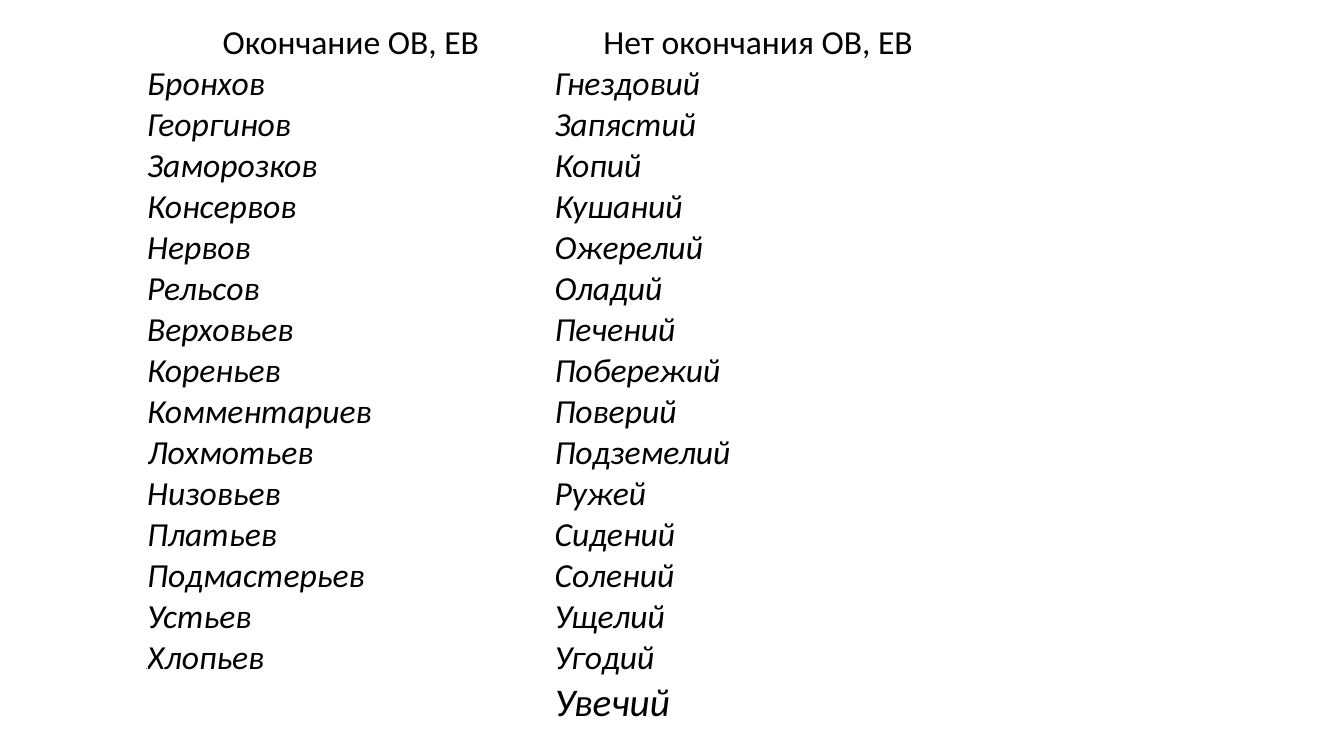
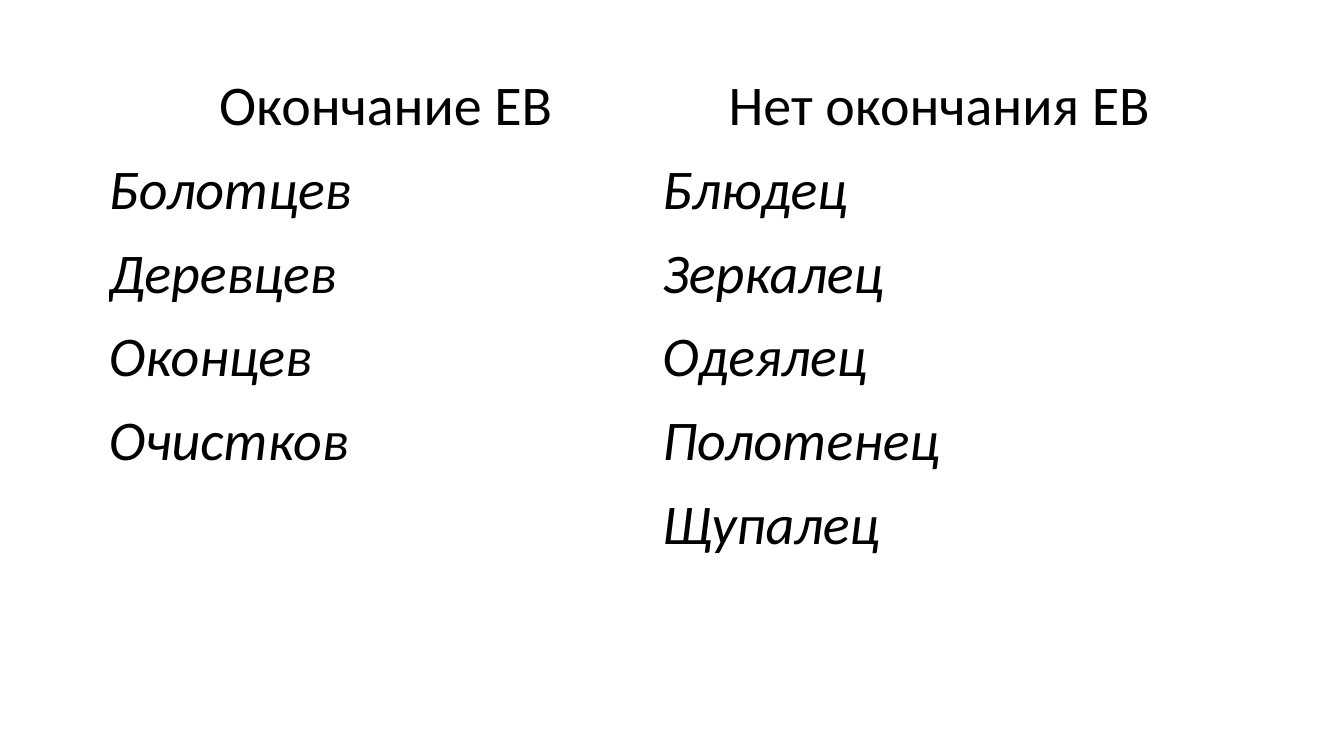
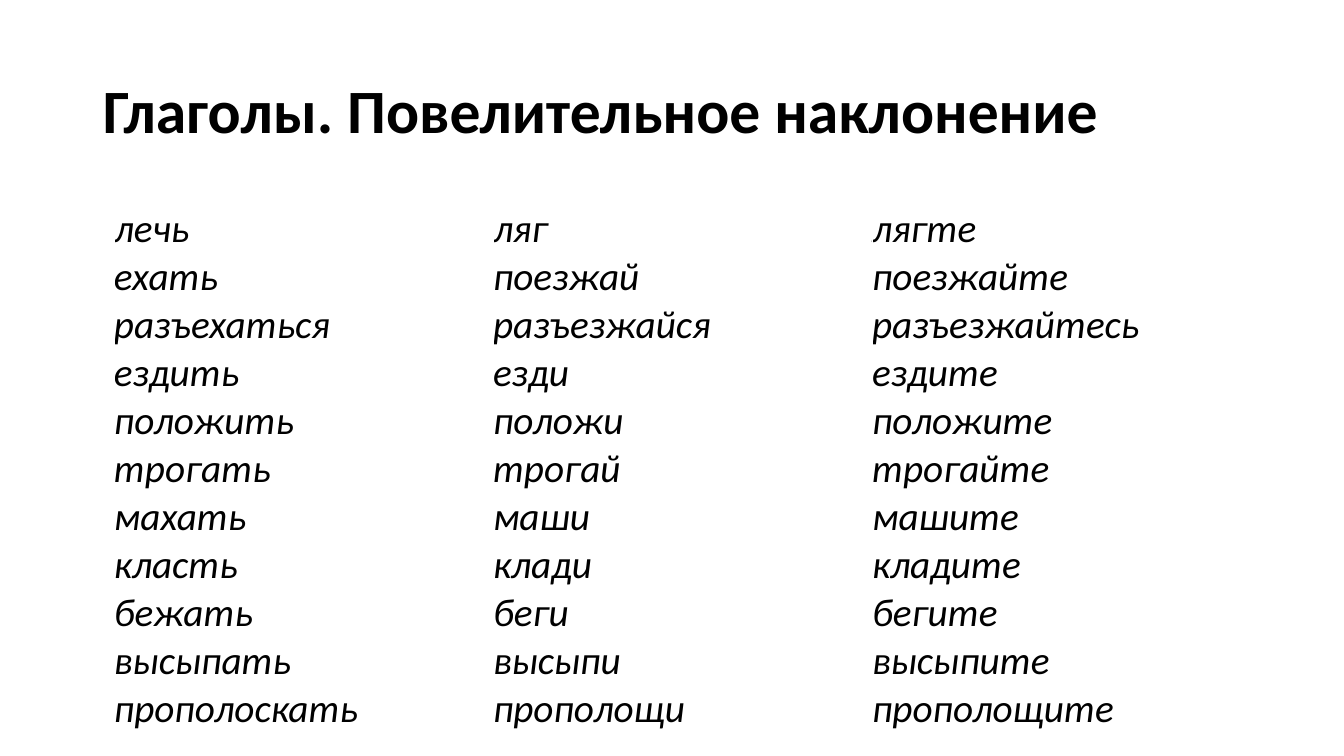
"""Build three slides of Russian word form tables."""
from itertools import zip_longest

from pptx import Presentation
from pptx.dml.color import RGBColor
from pptx.enum.text import MSO_ANCHOR, MSO_AUTO_SIZE, PP_ALIGN
from pptx.util import Emu, Pt

PX = 9144
FONT = "Calibri"
COLORS = {"text": "000000", "background": "FFFFFF"}
TITLE_ONLY, BLANK = 5, 6

PLURAL_HEADERS = ["Окончание ОВ, ЕВ", "Нет окончания ОВ, ЕВ"]
PLURAL_COLUMNS = [
    ["Бронхов", "Георгинов", "Заморозков", "Консервов", "Нервов", "Рельсов",
     "Верховьев", "Кореньев", "Комментариев", "Лохмотьев", "Низовьев",
     "Платьев", "Подмастерьев", "Устьев", "Хлопьев"],
    ["Гнездовий", "Запястий", "Копий", "Кушаний", "Ожерелий", "Оладий",
     "Печений", "Побережий", "Поверий", "Подземелий", "Ружей", "Сидений",
     "Солений", "Ущелий", "Угодий", "Увечий"],
]
DIMINUTIVE_HEADERS = ["Окончание ЕВ", "Нет окончания ЕВ"]
DIMINUTIVE_COLUMNS = [
    ["Болотцев", "Деревцев", "Оконцев", "Очистков"],
    ["Блюдец", "Зеркалец", "Одеялец", "Полотенец", "Щупалец"],
]
VERB_COLUMNS = [
    ["лечь", "ехать", "разъехаться", "ездить", "положить", "трогать",
     "махать", "класть", "бежать", "высыпать", "прополоскать"],
    ["ляг", "поезжай", "разъезжайся", "езди", "положи", "трогай",
     "маши", "клади", "беги", "высыпи", "прополощи"],
    ["лягте", "поезжайте", "разъезжайтесь", "ездите", "положите", "трогайте",
     "машите", "кладите", "бегите", "высыпите", "прополощите"],
]


def px(length):
    """Turn whole pixels into EMU."""
    return Emu(length * PX)


def color(name):
    """Look up a named colour."""
    return RGBColor.from_string(COLORS[name])


def write(frame, text, size, bold=False, italic=False,
          align=PP_ALIGN.LEFT, line_spacing=None):
    """Put formatted text into the first paragraph of a text frame."""
    paragraph = frame.paragraphs[0]
    paragraph.alignment = align
    paragraph.line_spacing = line_spacing
    run = paragraph.add_run()
    run.text = text
    run.font.name = FONT
    run.font.size = Pt(size)
    run.font.bold = bold
    run.font.italic = italic
    run.font.color.rgb = color("text")


def add_slide(presentation, layout):
    """Add a slide with the shared background."""
    slide = presentation.slides.add_slide(presentation.slide_layouts[layout])
    slide.background.fill.solid()
    slide.background.fill.fore_color.rgb = color("background")
    return slide


def set_title(slide, text):
    """Place and format the title placeholder."""
    title = slide.shapes.title
    title.left, title.top = px(92), px(40)
    title.width, title.height = px(1150), px(145)
    frame = title.text_frame
    frame.vertical_anchor = MSO_ANCHOR.MIDDLE
    frame.auto_size = MSO_AUTO_SIZE.NONE
    write(frame, text, 44, bold=True, line_spacing=0.9)


def fill_cell(cell, text, size, **text_format):
    """Fill a cell without margins, leaving it empty if it has no text."""
    cell.fill.solid()
    cell.fill.fore_color.rgb = color("background")
    cell.margin_left = cell.margin_right = 0
    cell.margin_top = cell.margin_bottom = 0
    if text:
        write(cell.text_frame, text, size, **text_format)


def add_word_table(slide, columns, left, top, column_width, row_height, size,
                   headers=(), last_size=None):
    """Add a table of italic word columns under optional centred headers."""
    words = list(zip_longest(*columns, fillvalue=""))
    row_count = len(words) + bool(headers)
    table = slide.shapes.add_table(
        row_count, len(columns), px(left), px(top),
        px(column_width * len(columns)), px(row_height * row_count)).table
    table.first_row = table.horz_banding = False
    for row in table.rows:
        row.height = px(row_height)
    for index, header in enumerate(headers):
        fill_cell(table.cell(0, index), header, size, align=PP_ALIGN.CENTER)
    for row_index, row_words in enumerate(words, start=bool(headers)):
        is_last = row_index == row_count - 1
        row_size = last_size if last_size and is_last else size
        for index, word in enumerate(row_words):
            fill_cell(table.cell(row_index, index), word, row_size, italic=True)


def main():
    """Build and save the presentation."""
    presentation = Presentation()
    presentation.slide_width, presentation.slide_height = px(1333), px(750)

    slide = add_slide(presentation, BLANK)
    add_word_table(slide, PLURAL_COLUMNS, 146, 22, 404, 28, 24,
                   headers=PLURAL_HEADERS, last_size=28)

    slide = add_slide(presentation, BLANK)
    add_word_table(slide, DIMINUTIVE_COLUMNS, 108, 72, 549, 83, 40,
                   headers=DIMINUTIVE_HEADERS)

    slide = add_slide(presentation, TITLE_ONLY)
    set_title(slide, "Глаголы. Повелительное наклонение")
    add_word_table(slide, VERB_COLUMNS, 113, 204, 376, 42, 28)

    presentation.save("out.pptx")


if __name__ == "__main__":
    main()
